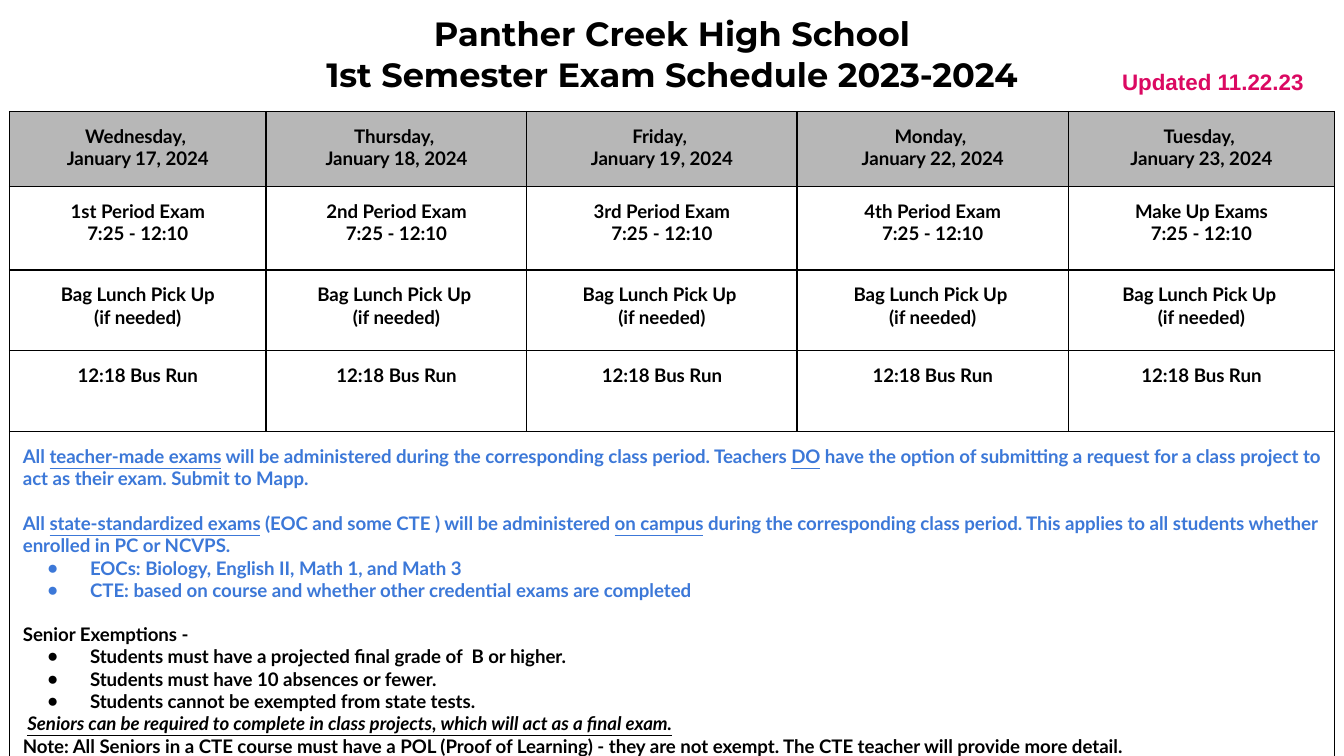
from lxml.etree import SubElement
from pptx import Presentation
from pptx.dml.color import RGBColor
from pptx.enum.text import PP_ALIGN
from pptx.oxml import parse_xml
from pptx.oxml.ns import nsdecls, qn
from pptx.util import Inches, Pt

COLORS = {"text": "000000", "blue": "3C78D8", "pink": "DB0962", "header": "B7B7B7"}
COLUMNS = [1.91, 1.94, 2.01, 2.02, 1.98]
ROWS = [0.56, 0.62, 0.6, 0.6, 2.5]
DAYS = [
    ("Wednesday, ", "January 17, 2024", "1st Period Exam", "Bag Lunch Pick Up"),
    ("Thursday, ", "January 18, 2024", "2nd Period Exam", "Bag Lunch Pick Up "),
    ("Friday, ", "January 19, 2024", "3rd Period Exam", "Bag Lunch Pick Up "),
    ("Monday, ", "January 22, 2024", "4th Period Exam", "Bag Lunch Pick Up "),
    ("Tuesday, ", "January 23, 2024", "Make Up Exams", "Bag Lunch Pick Up "),
]
UNDERLINE = {"underline": True}
NOTES = [
    ([("All ", {}), ("teacher-made exams", UNDERLINE),
      (" will be administered during the corresponding class period. Teachers ", {}),
      ("DO", UNDERLINE),
      (" have the option of submitting a request for a class project to act as their exam. Submit to Mapp.", {})],
     {"color": "blue"}),
    ([("All ", {}), ("state-standardized exams", UNDERLINE),
      (" (EOC and some CTE ) will be administered ", {}),
      ("on campus", UNDERLINE),
      (" during the corresponding class period. This applies to all students whether enrolled in PC or NCVPS.", {})],
     {"color": "blue", "before": 12}),
    ("EOCs: Biology, English II, Math 1, and Math 3", {"color": "blue", "bullet": True}),
    ("CTE: based on course and whether other credential exams are completed",
     {"color": "blue", "bullet": True}),
    ("Senior Exemptions -", {"before": 11.5}),
    ("Students must have a projected final grade of  B or higher.", {"bullet": True}),
    ("Students must have 10 absences or fewer.", {"bullet": True}),
    ("Students cannot be exempted from state tests.", {"bullet": True}),
    ([(" ", {}),
      ("Seniors can be required to complete in class projects, which will act as a final exam.",
       {"underline": True, "italic": True})], {}),
    ("Note: All Seniors in a CTE course must have a POL (Proof of Learning) - they are not exempt. "
     "The CTE teacher will provide more detail.", {}),
]


def add_run(p, text, font="Lato", size=10, color="text", underline=False, italic=False):
    r = p.add_run()
    r.text = text
    r.font.name = font
    r.font.size = Pt(size)
    r.font.bold = True
    r.font.italic = italic
    r.font.underline = underline
    r.font.color.rgb = RGBColor.from_string(COLORS[color])


class ExamSlide:
    def __init__(self, s):
        self.s = s

    def fill_text(self, tf, paragraphs, align=PP_ALIGN.LEFT, **style):
        tf.word_wrap = True
        for i, (content, options) in enumerate(paragraphs):
            p = tf.paragraphs[0] if i == 0 else tf.add_paragraph()
            p.alignment = align
            fmt = {**style, **options}
            p.space_before = Pt(fmt.pop("before", 0))
            if fmt.pop("bullet", False):
                self.bullet(p, fmt.get("color", "text"))
            runs = [(content, {})] if isinstance(content, str) else content
            for text, extra in runs:
                add_run(p, text, **{**fmt, **extra})

    def bullet(self, p, color):
        pPr = p._p.get_or_add_pPr()
        pPr.set("marL", str(Inches(0.5)))
        pPr.set("indent", str(Inches(-0.32)))
        SubElement(SubElement(pPr, qn("a:buClr")), qn("a:srgbClr"), val=COLORS[color])
        SubElement(pPr, qn("a:buFont"), typeface="Arial")
        SubElement(pPr, qn("a:buChar"), char="●")

    def text_box(self, x, y, w, h, lines, **style):
        sp = self.s.shapes.add_textbox(Inches(x), Inches(y), Inches(w), Inches(h))
        self.margins(sp.text_frame)
        self.fill_text(sp.text_frame, [(line, {}) for line in lines], **style)

    def margins(self, box):
        box.margin_left = box.margin_right = Inches(0.1)
        box.margin_top = box.margin_bottom = Inches(0.1)

    def borders(self, cell):
        tcPr = cell._tc.get_or_add_tcPr()
        for i, side in enumerate(("lnL", "lnR", "lnT", "lnB")):
            tcPr.insert(i, parse_xml(
                f'<a:{side} {nsdecls("a")} w="{Pt(0.75)}"><a:solidFill>'
                f'<a:srgbClr val="{COLORS["text"]}"/></a:solidFill></a:{side}>'))

    def table(self, x, y):
        frame = self.s.shapes.add_table(len(ROWS), len(COLUMNS), Inches(x), Inches(y),
                                        Inches(sum(COLUMNS)), Inches(sum(ROWS)))
        table = frame.table
        for column, width in zip(table.columns, COLUMNS):
            column.width = Inches(width)
        for row, height in zip(table.rows, ROWS):
            row.height = Inches(height)
        for i, row in enumerate(table.rows):
            for cell in row.cells:
                self.margins(cell)
                if i == 0:
                    cell.fill.solid()
                    cell.fill.fore_color.rgb = RGBColor.from_string(COLORS["header"])
                else:
                    cell.fill.background()
                self.borders(cell)
        return table


def main():
    prs = Presentation()
    prs.slide_width = Inches(10)
    prs.slide_height = prs.slide_width * 9 // 16
    slide = ExamSlide(prs.slides.add_slide(prs.slide_layouts[6]))

    slide.text_box(0.34, 0, 9.32, 0.83,
                   ["Panther Creek High School", "1st Semester Exam Schedule 2023-2024"],
                   align=PP_ALIGN.CENTER, font="Montserrat", size=18)

    table = slide.table(0.07, 0.83)
    for col, (day, date, exam, lunch) in enumerate(DAYS):
        entries = [(day, date), (exam, "7:25 - 12:10"),
                   (lunch, "(if needed)"), ("12:18 Bus Run",)]
        for row, lines in enumerate(entries):
            slide.fill_text(table.cell(row, col).text_frame,
                            [(line, {}) for line in lines], align=PP_ALIGN.CENTER)
    notes = table.cell(4, 0)
    notes.merge(table.cell(4, 4))
    slide.fill_text(notes.text_frame, NOTES)

    slide.text_box(8.25, 0.41, 1.62, 0.38, ["Updated 11.22.23"],
                   font="Arial", size=12, color="pink")
    prs.save("out.pptx")


if __name__ == "__main__":
    main()
